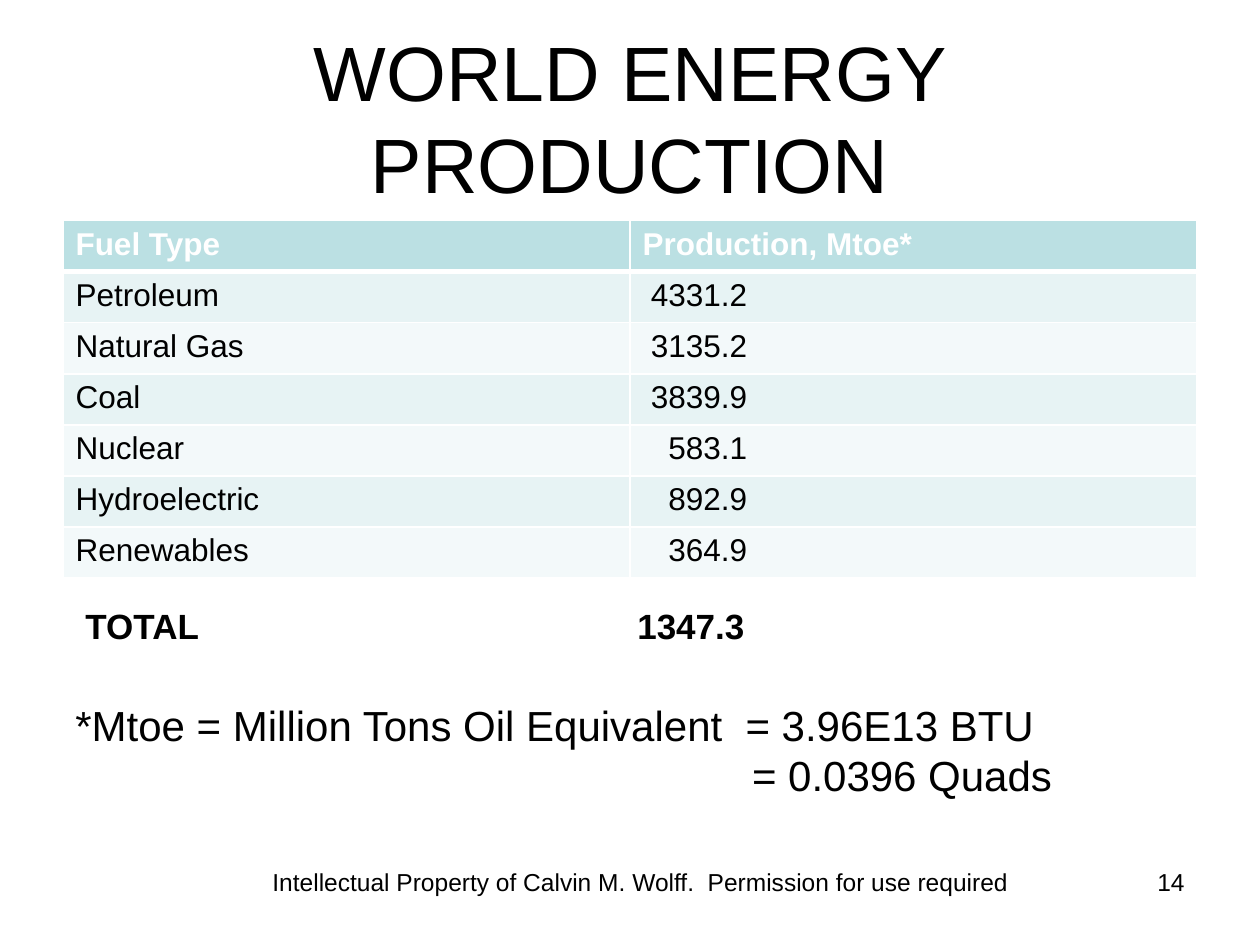
from lxml import etree
from pptx import Presentation
from pptx.dml.color import RGBColor
from pptx.enum import text
from pptx.oxml.ns import qn
from pptx.util import Inches, Pt

BLACK = RGBColor(0x00, 0x00, 0x00)
WHITE = RGBColor(0xFF, 0xFF, 0xFF)
HEADER = RGBColor(0xBB, 0xE0, 0xE3)
BANDS = [RGBColor(0xE7, 0xF3, 0xF4), RGBColor(0xF3, 0xF9, 0xFA)]


def write(frame, words, size, color=BLACK, bold=False, align=text.PP_ALIGN.LEFT, tab=None):
    """Fill a text frame with one Arial paragraph; tab is a left stop in inches."""
    frame.word_wrap = True
    paragraph = frame.paragraphs[0]
    paragraph.text = words
    paragraph.alignment = align
    font = paragraph.font
    font.name, font.size, font.bold = "Arial", Pt(size), bold
    font.color.rgb = color
    if tab:
        stops = etree.Element(qn("a:tabLst"))
        etree.SubElement(stops, qn("a:tab"), pos=str(Inches(tab)), algn="l")
        paragraph._p.get_or_add_pPr().insert(0, stops)


def add_borders(cell, top, bottom):
    """Draw white cell borders; top and bottom are widths in points."""
    properties = cell._tc.get_or_add_tcPr()
    for place, (side, width) in enumerate([("L", 1), ("R", 1), ("T", top), ("B", bottom)]):
        line = etree.Element(qn(f"a:ln{side}"), w=str(Pt(width)))
        fill = etree.SubElement(line, qn("a:solidFill"))
        etree.SubElement(fill, qn("a:srgbClr"), val=str(WHITE))
        properties.insert(place, line)


prs = Presentation()
prs.slide_width, prs.slide_height = Inches(10), Inches(7.5)
slide = prs.slides.add_slide(prs.slide_layouts[5])

title = slide.shapes.title
title.left, title.top = Inches(0.5), Inches(0.3)
title.width, title.height = Inches(9), Inches(1.25)
write(title.text_frame, "WORLD ENERGY PRODUCTION", 44, align=text.PP_ALIGN.CENTER)
title.text_frame.auto_size = text.MSO_AUTO_SIZE.NONE
title.text_frame.vertical_anchor = text.MSO_ANCHOR.MIDDLE

production = [
    ("Fuel Type", "Production, Mtoe*"),
    ("Petroleum", "4331.2"),
    ("Natural Gas", "3135.2"),
    ("Coal", "3839.9"),
    ("Nuclear", "583.1"),
    ("Hydroelectric", "892.9"),
    ("Renewables", "364.9"),
]
table = slide.shapes.add_table(
    len(production), 2, Inches(0.5), Inches(1.75), Inches(9), Inches(2.84)
).table
for r, row in enumerate(production):
    for c, words in enumerate(row):
        cell = table.cell(r, c)
        is_header = r == 0
        is_number = r > 0 and c == 1
        write(cell.text_frame, words, 18, WHITE if is_header else BLACK, is_header,
              text.PP_ALIGN.RIGHT if is_number else text.PP_ALIGN.LEFT)
        if is_number:
            cell.margin_right = Inches(3.57)
        cell.fill.solid()
        cell.fill.fore_color.rgb = HEADER if is_header else BANDS[(r - 1) % 2]
        add_borders(cell, top=3 if r == 1 else 1, bottom=3 if is_header else 1)

footer = "Intellectual Property of Calvin M. Wolff.  Permission for use required"
conversion = "*Mtoe = Million Tons Oil Equivalent  = 3.96E13 BTU\n\t= 0.0396 Quads"
captions = [
    ((2, 6.83, 6.17, 0.52), footer, 14, dict(align=text.PP_ALIGN.CENTER)),
    ((0.58, 4.75, 6.17, 0.44), "TOTAL\t1347.3", 20, dict(bold=True, tab=4.38)),
    ((0.5, 5.5, 8.08, 1.31), conversion, 24, dict(tab=5.37)),
    ((7.17, 6.83, 2.33, 0.52), "14", 14, dict(align=text.PP_ALIGN.RIGHT)),
]
for position, words, size, style in captions:
    caption = slide.shapes.add_textbox(*map(Inches, position))
    write(caption.text_frame, words, size, **style)

prs.save("out.pptx")
